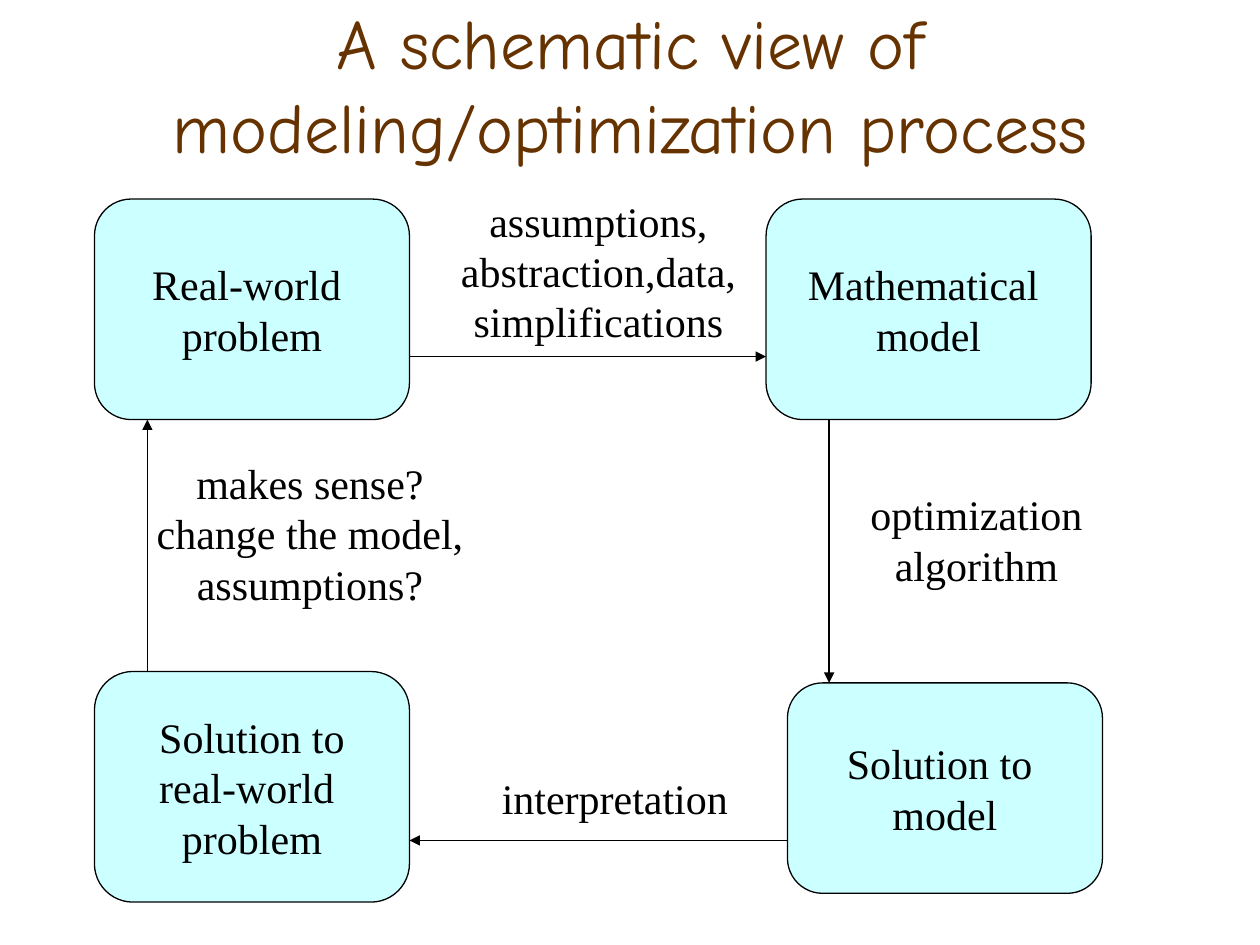
from lxml.etree import SubElement
from pptx import Presentation
from pptx.dml.color import RGBColor
from pptx.enum.shapes import MSO_CONNECTOR, MSO_SHAPE
from pptx.enum.text import MSO_ANCHOR, MSO_AUTO_SIZE, PP_ALIGN
from pptx.oxml.ns import qn
from pptx.util import Inches, Pt

COLORS = {"title": "663300", "text": "000000", "line": "000000", "box": "CCFFFF"}
TITLE = "A schematic view of modeling/optimization process"

BOXES = [
    (["Real-world ", "problem"], (0.75, 1.58, 2.5, 1.75)),
    (["Mathematical ", "model"], (6.08, 1.58, 2.58, 1.75)),
    (["Solution to ", "model"], (6.25, 5.42, 2.5, 1.67)),
    (["Solution to", "real-world ", "problem"], (0.75, 5.33, 2.5, 1.83)),
]
ARROWS = [
    ((3.25, 2.83), (6.08, 2.83)),
    ((6.58, 3.33), (6.58, 5.42)),
    ((6.25, 6.67), (3.25, 6.67)),
    ((1.17, 5.33), (1.17, 3.33)),
]
LABELS = [
    ("assumptions, abstraction,data,simplifications", (3.5, 1.5, 2.5, 1.3)),
    ("optimization algorithm", (6.75, 3.83, 2, 0.9)),
    ("interpretation", (3.67, 6.08, 2.42, 0.5)),
    ("makes sense? change the model, assumptions?", (1, 3.58, 2.92, 1.3)),
]


def color(name):
    return RGBColor.from_string(COLORS[name])


def inches(values):
    return [Inches(value) for value in values]


def write(shape, lines, font="Times New Roman", size=24, ink="text",
          anchor=MSO_ANCHOR.MIDDLE, wrap=True):
    frame = shape.text_frame
    frame.text = "\n".join(lines)
    frame.word_wrap = wrap
    frame.auto_size = MSO_AUTO_SIZE.NONE
    frame.vertical_anchor = anchor
    for paragraph in frame.paragraphs:
        paragraph.alignment = PP_ALIGN.CENTER
        run_font = paragraph.runs[0].font
        run_font.name = font
        run_font.size = Pt(size)
        run_font.color.rgb = color(ink)


def outline(shape):
    shape.line.color.rgb = color("line")
    shape.line.width = Pt(0.75)


def add_box(slide, lines, place):
    shape = slide.shapes.add_shape(MSO_SHAPE.FLOWCHART_ALTERNATE_PROCESS, *inches(place))
    shape.shadow.inherit = False
    shape.fill.solid()
    shape.fill.fore_color.rgb = color("box")
    outline(shape)
    write(shape, lines, wrap=False)


def add_arrow(slide, start, end):
    connector = slide.shapes.add_connector(MSO_CONNECTOR.STRAIGHT, *inches(start + end))
    outline(connector)
    SubElement(connector.line._get_or_add_ln(), qn("a:tailEnd"), type="triangle")
    SubElement(connector._element.spPr, qn("a:effectLst"))


def main():
    presentation = Presentation()
    presentation.slide_width, presentation.slide_height = Inches(10), Inches(7.5)
    slide = presentation.slides.add_slide(presentation.slide_layouts[5])

    title = slide.shapes.title
    title.left, title.top, title.width, title.height = inches((0.75, 0, 8.5, 1.33))
    write(title, [TITLE], font="Comic Neue", size=40, ink="title")

    for lines, place in BOXES:
        add_box(slide, lines, place)
    for start, end in ARROWS:
        add_arrow(slide, start, end)
    for text, place in LABELS:
        write(slide.shapes.add_textbox(*inches(place)), [text], anchor=MSO_ANCHOR.TOP)

    presentation.save("out.pptx")


if __name__ == "__main__":
    main()
